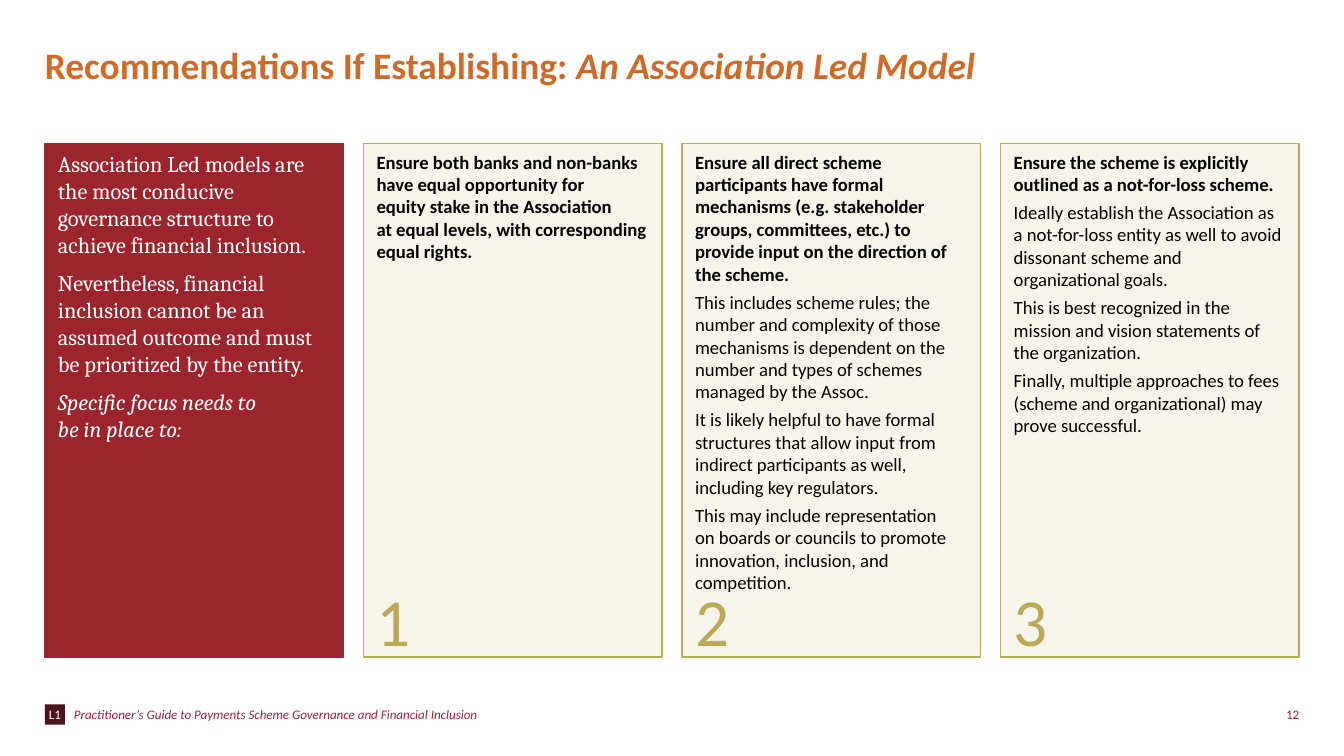
from dataclasses import dataclass

import pptx
import pptx.dml.color
import pptx.enum.shapes
import pptx.enum.text
import pptx.util

Pt = pptx.util.Pt
Align = pptx.enum.text.PP_ALIGN
Anchor = pptx.enum.text.MSO_ANCHOR


@dataclass(frozen=True)
class Theme:
    sans: str = "Calibri"
    serif: str = "Cambria"
    orange: str = "CE6B29"
    red: str = "9B242D"
    crimson: str = "98273B"
    maroon: str = "4C141D"
    gold: str = "BAAA58"
    cream: str = "F7F5EB"
    white: str = "FFFFFF"
    black: str = "000000"
    title_size: float = 20
    intro_size: float = 12
    card_size: float = 10
    number_size: float = 36
    footer_size: float = 7


@dataclass(frozen=True)
class Box:
    left: float
    top: float
    width: float
    height: float

    def lengths(self):
        return [Pt(value) for value in (self.left, self.top, self.width, self.height)]


THEME = Theme()

INTRO = [
    "Association Led models are the most conducive governance structure to achieve financial inclusion.",
    "Nevertheless, financial inclusion cannot be an assumed outcome and must be prioritized by the entity.",
    "Specific focus needs to \nbe in place to:",
]

CARDS = [
    [
        "Ensure both banks and non-banks have equal opportunity for \nequity stake in the Association "
        "\nat equal levels, with corresponding equal rights.",
    ],
    [
        "Ensure all direct scheme participants have formal mechanisms (e.g. stakeholder groups, "
        "committees, etc.) to provide input on the direction of the scheme.",
        "This includes scheme rules; the number and complexity of those mechanisms is dependent on "
        "the number and types of schemes managed by the Assoc.",
        "It is likely helpful to have formal structures that allow input from indirect participants "
        "as well, including key regulators.",
        "This may include representation \non boards or councils to promote innovation, inclusion, "
        "and competition.",
    ],
    [
        "Ensure the scheme is explicitly outlined as a not-for-loss scheme.",
        "Ideally establish the Association as a not-for-loss entity as well to avoid dissonant scheme "
        "and organizational goals.",
        "This is best recognized in the mission and vision statements of the organization.",
        "Finally, multiple approaches to fees (scheme and organizational) may prove successful.",
    ],
]


def color(value):
    return pptx.dml.color.RGBColor.from_string(value)


def style(para, name, size, ink, bold=False, italic=None, align=Align.LEFT, after=0):
    para.alignment = align
    para.space_after = Pt(after)
    font = para.font
    font.name, font.size, font.bold, font.italic = name, Pt(size), bold, italic
    font.color.rgb = color(ink)


def set_frame(frame, anchor, inset=None):
    frame.word_wrap = True
    frame.auto_size = pptx.enum.text.MSO_AUTO_SIZE.NONE
    frame.vertical_anchor = anchor
    if inset is not None:
        frame.margin_left = frame.margin_right = Pt(inset)
        frame.margin_top = frame.margin_bottom = Pt(inset)


def add_panel(page, box, fill, line=None):
    panel = page.shapes.add_shape(pptx.enum.shapes.MSO_SHAPE.RECTANGLE, *box.lengths())
    panel.shadow.inherit = False
    panel.fill.solid()
    panel.fill.fore_color.rgb = color(fill)
    if line:
        panel.line.color.rgb = color(line)
        panel.line.width = Pt(0.75)
    else:
        panel.line.fill.background()
    return panel.text_frame


def add_label(page, box, text, anchor=Anchor.MIDDLE, inset=0, **look):
    frame = page.shapes.add_textbox(*box.lengths()).text_frame
    set_frame(frame, anchor, inset)
    frame.text = text
    style(frame.paragraphs[0], THEME.sans, **look)


def add_paragraphs(frame, texts):
    set_frame(frame, Anchor.TOP)
    for index, text in enumerate(texts):
        para = frame.add_paragraph() if index else frame.paragraphs[0]
        para.text = text
        yield index, para


def add_title(page, box):
    title = page.shapes.title
    title.left, title.top, title.width, title.height = box.lengths()
    set_frame(title.text_frame, Anchor.MIDDLE, 0)
    para = title.text_frame.paragraphs[0]
    style(para, THEME.sans, THEME.title_size, THEME.orange, bold=True)
    para.add_run().text = "Recommendations If Establishing: "
    span = para.add_run()
    span.text = "An Association Led Model"
    span.font.italic = True


def add_intro(page, box):
    frame = add_panel(page, box, THEME.red, THEME.crimson)
    for index, para in add_paragraphs(frame, INTRO):
        last = index == len(INTRO) - 1
        style(para, THEME.serif, THEME.intro_size, THEME.white, italic=last, after=6)


def add_card(page, box, number, texts):
    frame = add_panel(page, box, THEME.cream, THEME.gold)
    for index, para in add_paragraphs(frame, texts):
        style(para, THEME.sans, THEME.card_size, THEME.black, bold=index == 0, after=3)
    number_box = Box(box.left, box.top + box.height - 46, box.width, 51)
    add_label(page, number_box, str(number), Anchor.BOTTOM, None,
              size=THEME.number_size, ink=THEME.gold, after=3)


def add_columns(page, box):
    width = 160
    count = len(CARDS) + 1
    pitch = (box.width - width) / (count - 1)
    columns = [Box(box.left + i * pitch, box.top, width, box.height) for i in range(count)]
    add_intro(page, columns[0])
    for number, texts in enumerate(CARDS, 1):
        add_card(page, columns[number], number, texts)


def add_footer(page, box):
    badge = add_panel(page, Box(box.left, box.top, box.height, box.height), THEME.maroon)
    set_frame(badge, Anchor.MIDDLE, 0)
    badge.text = "L1"
    style(badge.paragraphs[0], THEME.sans, THEME.footer_size, THEME.white, align=Align.CENTER)
    add_label(page, Box(box.left + 15.6, box.top, 243, box.height),
              "Practitioner’s Guide to Payments Scheme Governance and Financial Inclusion",
              size=THEME.footer_size, ink=THEME.crimson, italic=True)
    add_label(page, Box(box.left + box.width - 24, box.top, 24, box.height), "12",
              size=THEME.footer_size, ink=THEME.crimson, align=Align.RIGHT)


def main():
    deck = pptx.Presentation()
    deck.slide_width, deck.slide_height = Pt(720), Pt(405)
    page = deck.slides.add_slide(deck.slide_layouts[5])
    add_title(page, Box(24, 22.5, 660, 24.5))
    add_columns(page, Box(24, 77, 672, 275))
    add_footer(page, Box(24, 377.4, 672, 10.8))
    deck.save("out.pptx")


if __name__ == "__main__":
    main()
